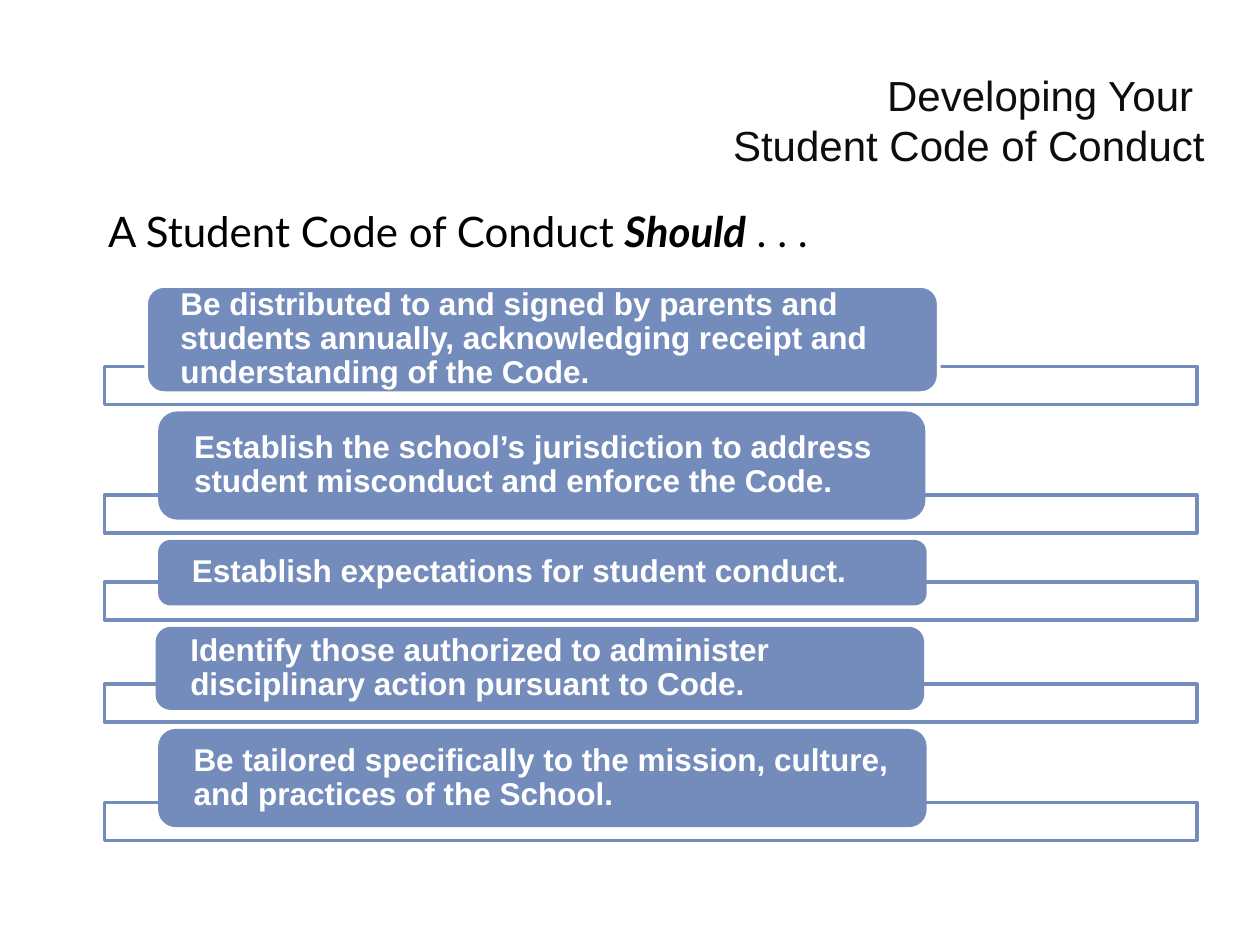
import pptx
import pptx.util
import pptx.dml.color
import pptx.enum.shapes
import pptx.enum.text
import lxml.etree

HUES = {"blue": "748CBC", "white": "FFFFFF", "black": "000000", "ink": "0D0D0D"}
COLS, ROWS = 100, 75
WIDE, HIGH = pptx.util.Inches(10), pptx.util.Inches(7.5)
GAP, BAR = 0.7, 3
KIND = pptx.enum.shapes.MSO_SHAPE

# text, pill indent, pill width, pill height, drop of the bar below the pill, pill line
DUTIES = [
    ("Be distributed to and signed by parents and students annually, "
     "acknowledging receipt and understanding of the Code.", 3.3, 62.9, 8.5, 0.9, "white"),
    ("Establish the school’s jurisdiction to address student misconduct "
     "and enforce the Code.", 4.4, 60.6, 8.3, 1.2, "blue"),
    ("Establish expectations for student conduct.", 4.4, 60.7, 4.9, 1.3, "blue"),
    ("Identify those authorized to administer disciplinary action "
     "pursuant to Code.", 4.2, 60.7, 6.3, 1.1, "blue"),
    ("Be tailored specifically to the mission, culture, and practices "
     "of the School.", 4.4, 60.7, 7.5, 1.2, "blue"),
]


def hue(name):
    """Return the named colour."""
    return pptx.dml.color.RGBColor.from_string(HUES[name])


def grid(left, top, width, height):
    """Turn columns and rows into slide lengths."""
    x, y = WIDE / COLS, HIGH / ROWS
    return [round(n) for n in (left * x, top * y, width * x, height * y)]


def style(par, size, face, tint, bold=None):
    """Format every run of a paragraph."""
    for run in par.runs:
        run.font.size = pptx.util.Pt(size)
        run.font.name = face
        run.font.bold = bold
        run.font.color.rgb = hue(tint)


def block(slide, kind, box, fill, line):
    """Add a filled and outlined shape without shadow."""
    shape = slide.shapes.add_shape(kind, *grid(*box))
    shape.shadow.inherit = False
    shape.fill.solid()
    shape.fill.fore_color.rgb = hue(fill)
    shape.line.color.rgb = hue(line)
    shape.line.width = pptx.util.Pt(2.08)
    return shape


def title(slide, box):
    """Place the right-aligned slide title."""
    frame = slide.shapes.add_textbox(*grid(*box)).text_frame
    frame.word_wrap = True
    frame.text = "Developing Your \nStudent Code of Conduct"
    for par in frame.paragraphs:
        par.alignment = pptx.enum.text.PP_ALIGN.RIGHT
        style(par, 24, "Arial", "ink")


def lead(slide, box):
    """Place the sentence that opens the list."""
    frame = slide.shapes.add_textbox(*grid(*box)).text_frame
    frame.word_wrap = True
    par = frame.paragraphs[0]
    for text in ("A Student Code of Conduct ", "Should", " . . ."):
        par.add_run().text = text
    style(par, 24, "Lato", "black")
    par.runs[1].font.bold = par.runs[1].font.italic = True
    par.space_before = pptx.util.Pt(4.5)
    props = par._p.get_or_add_pPr()
    props.set("marL", str(pptx.util.Inches(0.87)))
    props.set("indent", str(pptx.util.Inches(-0.61)))


def duty(slide, box, text, indent, width, tall, line):
    """Place one pill of text over the bar at the foot of its box."""
    left, top, span, height = box
    bar = block(slide, KIND.RECTANGLE, (left, top + height - BAR, span, BAR), "white", "blue")
    tint = bar.fill._xPr.find(".//" + pptx.oxml.ns.qn("a:srgbClr"))
    lxml.etree.SubElement(tint, pptx.oxml.ns.qn("a:alpha")).set("val", "90000")

    pill = block(slide, KIND.ROUNDED_RECTANGLE, (left + indent, top, width, tall), "blue", line)
    frame = pill.text_frame
    frame.word_wrap = True
    frame.vertical_anchor = pptx.enum.text.MSO_ANCHOR.MIDDLE
    frame.margin_left = frame.margin_right = pptx.util.Inches(0.23)
    frame.margin_top = frame.margin_bottom = 0
    frame.text = text
    par = frame.paragraphs[0]
    par.alignment = pptx.enum.text.PP_ALIGN.LEFT
    par.line_spacing = 0.9
    style(par, 18, "Arial", "white", True)


def duties(slide, box):
    """Stack the duties down the box with equal gaps."""
    left, top, span = box
    for text, indent, width, tall, drop, line in DUTIES:
        height = tall + drop
        duty(slide, (left, top, span, height), text, indent, width, tall, line)
        top += height + GAP


def main():
    """Build and save the slide."""
    deck = pptx.Presentation()
    deck.slide_width, deck.slide_height = WIDE, HIGH
    slide = deck.slides.add_slide(deck.slide_layouts[6])
    lead(slide, (5, 15.8, 90, 52.5))
    duties(slide, (8.3, 22.7, 86.7))
    title(slide, (33.3, 5, 63.3, 9.1))
    deck.save("out.pptx")


if __name__ == "__main__":
    main()
